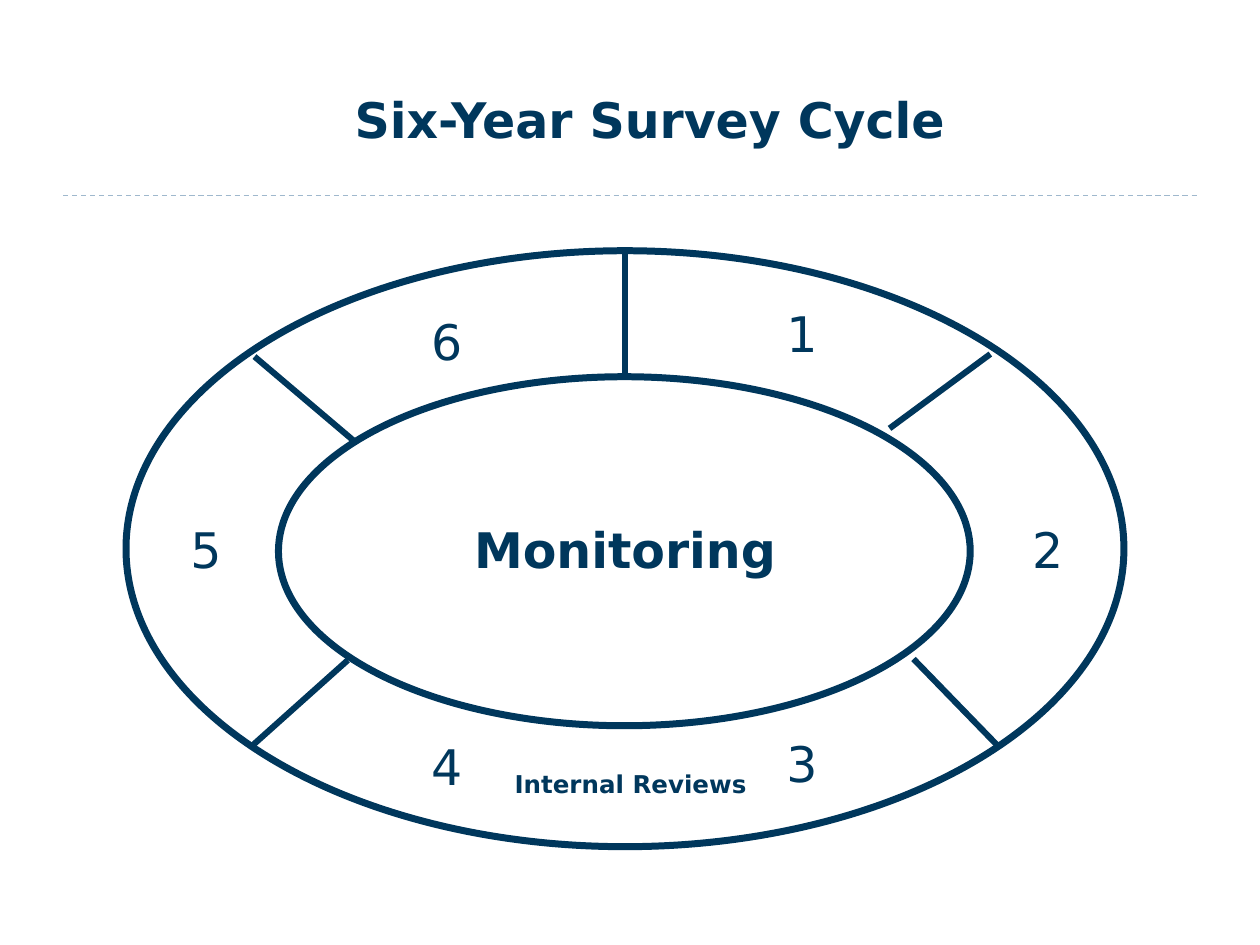
from lxml import etree
from pptx import Presentation
from pptx import util as u
from pptx.dml.color import RGBColor
from pptx.enum import dml, shapes, text
from pptx.oxml.ns import qn

NAVY = "00375C"
RULE = "9FB8CD"
WHITE = "FFFFFF"
FONT = "DejaVu Sans"


def colour(value):
    return RGBColor.from_string(value)


def apply(target, values):
    for name, value in values.items():
        setattr(target, name, value)


def inches(*lengths):
    return [u.Inches(length) for length in lengths]


def write(shape, words, size=28, bold=False, anchor=text.MSO_ANCHOR.MIDDLE,
          wrap=False, fit=text.MSO_AUTO_SIZE.SHAPE_TO_FIT_TEXT):
    frame = shape.text_frame
    apply(frame, {"word_wrap": wrap, "auto_size": fit, "vertical_anchor": anchor})
    para = frame.paragraphs[0]
    para.alignment = text.PP_ALIGN.CENTER
    span = para.add_run()
    span.text = words
    apply(span.font, {"name": FONT, "size": u.Pt(size), "bold": bold})
    span.font.color.rgb = colour(NAVY)


def add_line(page, start, end, width, line_colour, dash=None):
    line = page.shapes.add_connector(
        shapes.MSO_CONNECTOR.STRAIGHT, *inches(*start, *end))
    line.line.color.rgb = colour(line_colour)
    apply(line.line, {"width": u.Pt(width), "dash_style": dash})
    etree.SubElement(line._element.spPr, qn("a:effectLst"))


def add_ring(page, box):
    ring = page.shapes.add_shape(shapes.MSO_SHAPE.OVAL, *inches(*box))
    ring.shadow.inherit = False
    ring.fill.background()
    ring.line.color.rgb = colour(NAVY)
    ring.line.width = u.Pt(4)


def add_heading(page, box):
    left, top, width, height = box
    title = page.shapes.title
    apply(title, dict(zip(("left", "top", "width", "height"),
                          inches(left + 1.74, top, 5.83, 1.06))))
    write(title, "Six-Year Survey Cycle", bold=True, wrap=True,
          anchor=text.MSO_ANCHOR.BOTTOM, fit=text.MSO_AUTO_SIZE.NONE)
    bottom = top + height
    add_line(page, (left, bottom), (left + width, bottom), 0.75, RULE,
             dml.MSO_LINE.DASH)


def add_cycle(page, box):
    left, top, width, height = box
    middle = width / 2

    def place(x, y):
        return left + x, top + y

    add_ring(page, box)
    add_ring(page, (*place(1.21, 1), 5.49, 2.77))

    dividers = [
        ((middle, 0.97), (middle, 0)),
        ((6.06, 1.41), (6.86, 0.82)),
        ((6.25, 3.24), (6.92, 3.93)),
        ((1.76, 3.25), (1, 3.93)),
        ((1.02, 0.84), (1.81, 1.51)),
    ]
    for start, end in dividers:
        add_line(page, place(*start), place(*end), 3.5, NAVY)

    years = [(5.14, 0.37), (7.09, 2.08), (5.14, 3.78),
             (2.32, 3.8), (0.41, 2.08), (2.32, 0.43)]
    for year, corner in enumerate(years, 1):
        label = page.shapes.add_textbox(*inches(*place(*corner), 0.45, 0.57))
        write(label, str(year))

    hub = page.shapes.add_shape(
        shapes.MSO_SHAPE.RECTANGLE,
        *inches(*place(middle - 2.59 / 2, 2.08), 2.59, 0.57))
    hub.shadow.inherit = False
    hub.fill.solid()
    hub.fill.fore_color.rgb = colour(WHITE)
    hub.line.fill.background()
    apply(hub.text_frame, {"margin_left": 0, "margin_right": 0})
    write(hub, "Monitoring", bold=True)

    reviews = page.shapes.add_textbox(*inches(*place(2.93, 4.06), 2.15, 0.34))
    write(reviews, "Internal Reviews", size=14, bold=True, wrap=True)


def main():
    deck = Presentation()
    apply(deck, {"slide_width": u.Inches(10), "slide_height": u.Inches(7.5)})
    page = deck.slides.add_slide(deck.slide_layouts[5])
    page.background.fill.solid()
    page.background.fill.fore_color.rgb = colour(WHITE)
    add_heading(page, (0.5, 0.17, 9, 1.38))
    add_cycle(page, (1, 1.99, 7.92, 4.73))
    deck.save("out.pptx")


if __name__ == "__main__":
    main()
